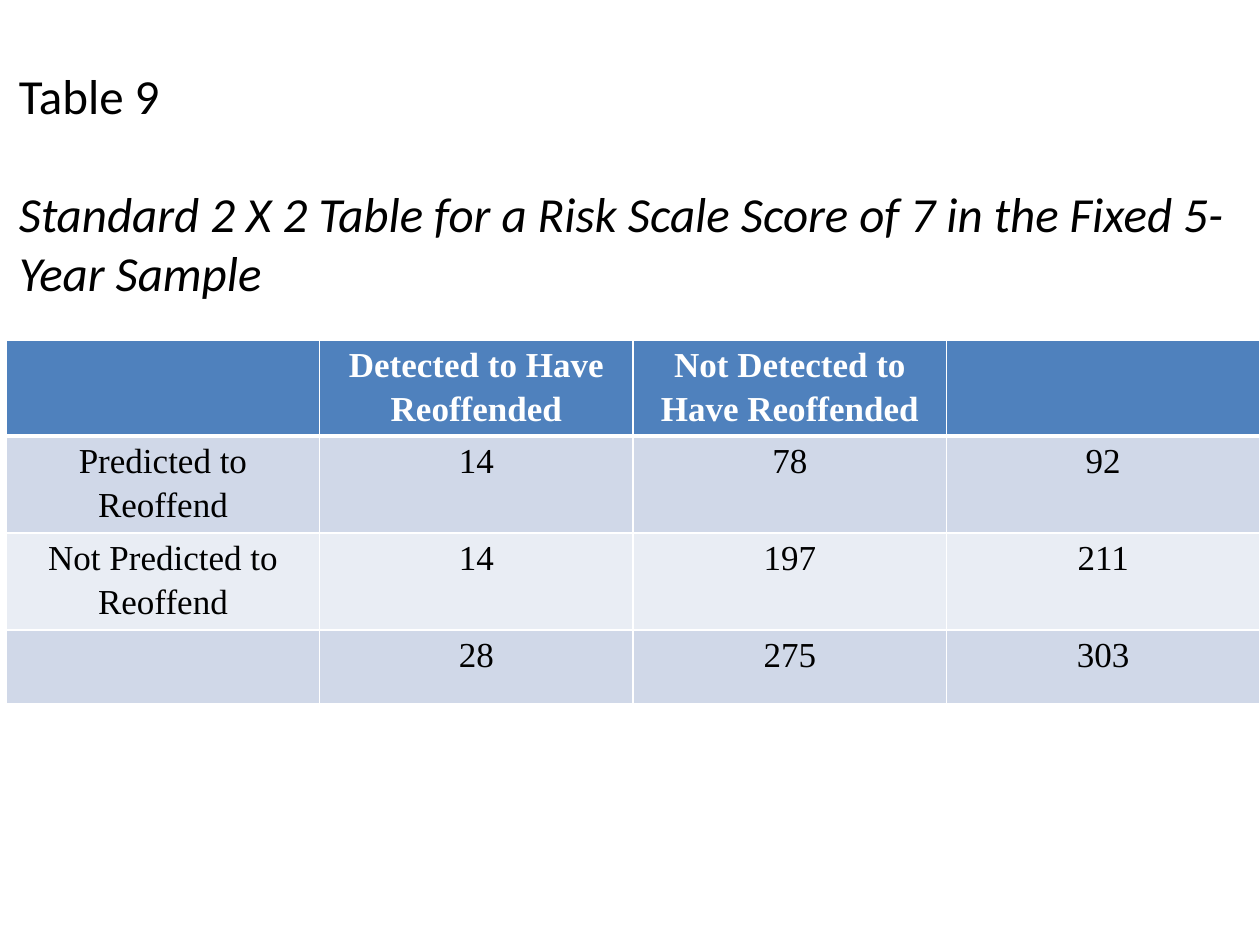
from pptx import Presentation
from pptx.dml.color import RGBColor
from pptx.enum.text import MSO_ANCHOR, MSO_AUTO_SIZE, PP_ALIGN
from pptx.oxml import parse_xml
from pptx.oxml.ns import nsdecls
from pptx.util import Inches, Pt

LEFT, CENTER = PP_ALIGN.LEFT, PP_ALIGN.CENTER
BOTTOM = MSO_ANCHOR.BOTTOM
NO_FIT = MSO_AUTO_SIZE.NONE
TITLE_ONLY = 5
WHITE, BLACK = "FFFFFF", "000000"
HEADER, BANDS = "4F81BD", ("D0D8E8", "E9EDF4")
ROWS = [
    ["", "Detected to Have Reoffended", "Not Detected to Have Reoffended", ""],
    ["Predicted to Reoffend", "14", "78", "92"],
    ["Not Predicted to Reoffend", "14", "197", "211"],
    ["", "28", "275", "303"],
]
ROW_HEIGHTS = [0.76, 0.77, 0.77, 0.59]


def rgb(color):
    return RGBColor.from_string(color)


def write(p, text, size=20, font="Times New Roman", color=BLACK, bold=False,
          italic=False, align=CENTER, spacing=1.0, before=0):
    p.alignment, p.line_spacing, p.space_before = align, spacing, Pt(before)
    r = p.add_run()
    r.text = text
    f = r.font
    f.size, f.name, f.bold, f.italic = Pt(size), font, bold, italic
    f.color.rgb = rgb(color)


def set_borders(cell, bottom=1):
    pr = cell._tc.get_or_add_tcPr()
    widths = {"lnL": 1, "lnR": 1, "lnT": 1, "lnB": bottom}
    for i, (tag, width) in enumerate(widths.items()):
        pr.insert(i, parse_xml(
            f'<a:{tag} {nsdecls("a")} w="{Pt(width)}"><a:solidFill>'
            f'<a:srgbClr val="{WHITE}"/></a:solidFill></a:{tag}>'))


def add_title(s, x, y, w, h):
    sp = s.shapes.title
    sp.left, sp.top, sp.width, sp.height = map(Inches, (x, y, w, h))
    tf = sp.text_frame
    tf.word_wrap, tf.auto_size, tf.vertical_anchor = True, NO_FIT, BOTTOM
    tf.margin_bottom = Inches(0.07)
    style = dict(size=28, font="Calibri", align=LEFT)
    write(tf.paragraphs[0], "Table 9", **style)
    write(tf.add_paragraph(),
          "Standard 2 X 2 Table for a Risk Scale Score of 7 in the Fixed 5-Year Sample",
          italic=True, before=33.5, **style)


def add_data_table(s, x, y, w, h):
    table = s.shapes.add_table(len(ROWS), len(ROWS[0]),
                               *map(Inches, (x, y, w, h))).table
    for column in table.columns:
        column.width = Inches(w / len(ROWS[0]))
    for i, (values, height) in enumerate(zip(ROWS, ROW_HEIGHTS)):
        table.rows[i].height = Inches(height)
        head = i == 0
        for j, text in enumerate(values):
            cell = table.cell(i, j)
            cell.margin_left = cell.margin_right = Inches(0.07)
            cell.margin_top = cell.margin_bottom = 0
            cell.fill.solid()
            cell.fill.fore_color.rgb = rgb(HEADER if head else BANDS[(i - 1) % 2])
            set_borders(cell, bottom=3 if head else 1)
            if text:
                write(cell.text_frame.paragraphs[0], text, bold=head,
                      color=WHITE if head else BLACK, spacing=1.15)


def main():
    prs = Presentation()
    prs.slide_width, prs.slide_height = Inches(10), Inches(7.5)
    s = prs.slides.add_slide(prs.slide_layouts[TITLE_ONLY])
    add_data_table(s, 0.05, 2.7, 9.95, sum(ROW_HEIGHTS))
    add_title(s, 0.05, 0, 9.95, 2.46)
    prs.save("out.pptx")


if __name__ == "__main__":
    main()
